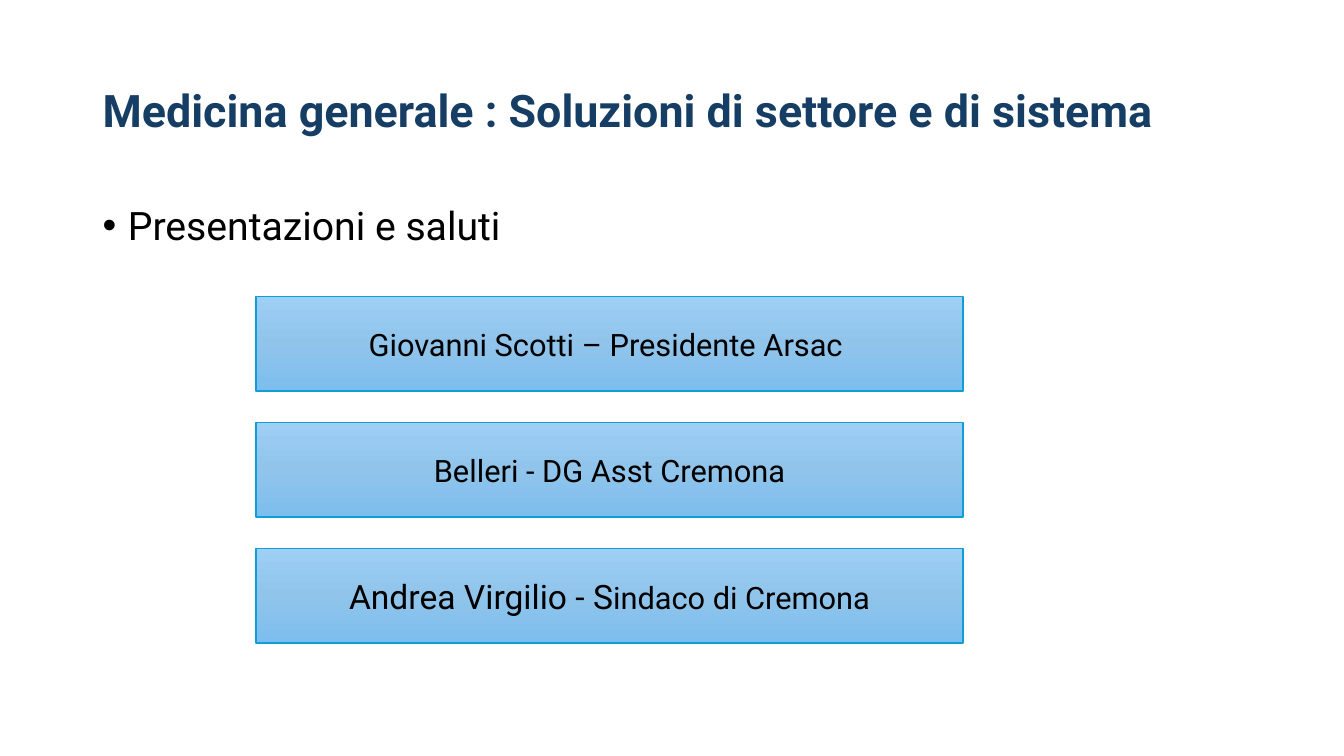
from copy import deepcopy

from lxml import etree
from pptx import Presentation
from pptx.dml.color import RGBColor
from pptx.enum.shapes import MSO_SHAPE
from pptx.enum.text import MSO_ANCHOR, PP_ALIGN
from pptx.oxml.ns import qn
from pptx.util import Inches, Pt

RECTANGLE = MSO_SHAPE.RECTANGLE
TOP, MIDDLE = MSO_ANCHOR.TOP, MSO_ANCHOR.MIDDLE
LEFT, CENTER = PP_ALIGN.LEFT, PP_ALIGN.CENTER

FONT = "Roboto"
NAVY, BLACK, BORDER = "163E64", "000000", "0F9ED5"
GRADIENT = [(0, "9ECFF5"), (0.5, "90C4EB"), (1, "7CBEED")]

# Layout in inches
MARGIN, CONTENT_WIDTH = 0.92, 11.5
CARD_LEFT, CARD_TOP, CARD_WIDTH = 2.54, 2.94, 7.01
ROW_HEIGHT, ROW_STEP = 0.94, 1.25

# Each speaker is a list of (text, size) runs
SPEAKERS = [
    [("Giovanni Scotti – Presidente Arsac ", 22)],
    [("Belleri - DG Asst Cremona", 22)],
    [("Andrea Virgilio - S", 24), ("indaco di Cremona", 22)],
]


def color(hex_value):
    return RGBColor.from_string(hex_value)


def add_bullet(paragraph, indent):
    properties = paragraph._p.get_or_add_pPr()
    properties.set("marL", str(Inches(indent)))
    properties.set("indent", str(-Inches(indent)))
    etree.SubElement(properties, qn("a:buFont")).set("typeface", "Arial")
    etree.SubElement(properties, qn("a:buChar")).set("char", "•")


def write(shape, runs, ink=BLACK, bold=False, align=LEFT, anchor=MIDDLE,
          line_spacing=1.0, bullet=False):
    frame = shape.text_frame
    frame.word_wrap = True
    frame.vertical_anchor = anchor
    paragraph = frame.paragraphs[0]
    if bullet:
        add_bullet(paragraph, 0.25)
    paragraph.alignment = align
    paragraph.line_spacing = line_spacing
    for text, size in runs:
        run = paragraph.add_run()
        run.text = text
        run.font.name = FONT
        run.font.size = Pt(size)
        run.font.bold = bold
        run.font.color.rgb = color(ink)


def add_text(slide, top, height, runs, **text_format):
    box = slide.shapes.add_textbox(
        Inches(MARGIN), Inches(top), Inches(CONTENT_WIDTH), Inches(height))
    write(box, runs, line_spacing=0.9, **text_format)


def fill_gradient(shape, stops):
    shape.fill.gradient()
    shape.fill.gradient_angle = 270
    # The default gradient has two stops, so add the middle one
    stop_list = shape._element.spPr.find(".//" + qn("a:gsLst"))
    stop_list.insert(1, deepcopy(stop_list[0]))
    for stop, (position, hex_value) in zip(shape.fill.gradient_stops, stops):
        stop.position = position
        stop.color.rgb = color(hex_value)


def add_speaker(slide, row, runs):
    card = slide.shapes.add_shape(
        RECTANGLE, Inches(CARD_LEFT), Inches(CARD_TOP + row * ROW_STEP),
        Inches(CARD_WIDTH), Inches(ROW_HEIGHT))
    card.shadow.inherit = False
    fill_gradient(card, GRADIENT)
    card.line.color.rgb = color(BORDER)
    card.line.width = Pt(1)
    write(card, runs, align=CENTER)


def main():
    deck = Presentation()
    deck.slide_width, deck.slide_height = Inches(13.33), Inches(7.5)
    slide = deck.slides.add_slide(deck.slide_layouts[6])

    # Heading and topic
    add_text(slide, 0.4, 1.45,
             [("Medicina generale : Soluzioni di settore e di sistema", 32)],
             ink=NAVY, bold=True)
    add_text(slide, 2, ROW_HEIGHT, [("Presentazioni e saluti", 28)],
             anchor=TOP, bullet=True)

    # Speakers
    for row, runs in enumerate(SPEAKERS):
        add_speaker(slide, row, runs)

    deck.save("out.pptx")


if __name__ == "__main__":
    main()
